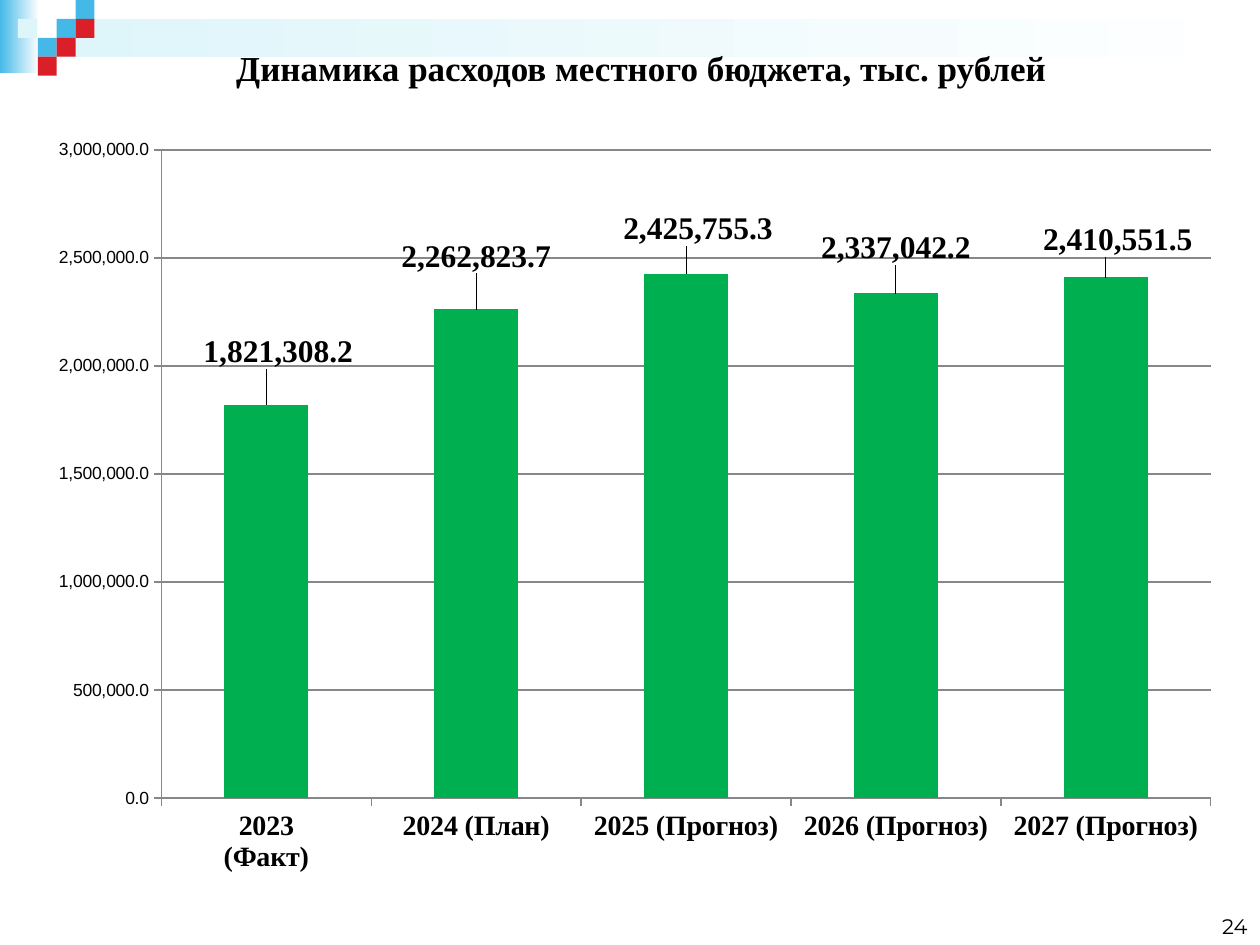
from lxml import etree
from pptx import Presentation
from pptx.chart.data import CategoryChartData
from pptx.dml.color import RGBColor
from pptx.enum.chart import XL_CHART_TYPE, XL_LABEL_POSITION, XL_TICK_MARK
from pptx.enum.shapes import MSO_SHAPE
from pptx.enum.text import MSO_ANCHOR, PP_ALIGN
from pptx.oxml.ns import qn
from pptx.util import Inches, Pt

RECT = MSO_SHAPE.RECTANGLE
COLUMN = XL_CHART_TYPE.COLUMN_CLUSTERED
OUT_END = XL_LABEL_POSITION.OUTSIDE_END
OUTSIDE = XL_TICK_MARK.OUTSIDE
MIDDLE, BOTTOM = MSO_ANCHOR.MIDDLE, MSO_ANCHOR.BOTTOM
CENTER, RIGHT = PP_ALIGN.CENTER, PP_ALIGN.RIGHT

SERIF, SANS, PAGE = "Times New Roman", "Arial", "Montserrat"
BLUE, RED, PALE, WHITE = "44B9E8", "DA1F28", "DEF5FA", "FFFFFF"
BLACK, GREEN, GRAY = "000000", "00B050", "878787"
FORMAT = "#,##0.0"

# Content
TITLE = "Динамика расходов местного бюджета, тыс. рублей"
NUMBER = "24"
# category, value, label shift as a share of the chart (x, y)
BARS = [
    ("2023\n(Факт)", 1821308.2, 0.01, -0.04),
    ("2024 (План)", 2262823.7, 0, -0.04),
    ("2025 (Прогноз)", 2425755.3, 0.01, -0.03),
    ("2026 (Прогноз)", 2337042.2, 0, -0.03),
    ("2027 (Прогноз)", 2410551.5, 0.01, -0.02),
]
BANDS = [((0, 0, 0.31, 0.58), BLUE), ((0.45, 0.15, 9.55, 0.3), PALE)]
# colour, column, row on a grid of small squares
SIDE = 0.15
TILES = [(BLUE, 3, 1), (BLUE, 4, 0), (RED, 4, 1), (BLUE, 2, 2),
         (PALE, 0.95, 1), (RED, 3, 2), (RED, 2, 3)]
PLOT = (0.105, 0.033, 0.874, 0.849)


def color(code):
    return RGBColor.from_string(code)


def style(font, name, size, bold=False):
    font.name, font.size, font.bold = name, Pt(size), bold
    font.color.rgb = color(BLACK)


def block(slide, box):
    shape = slide.shapes.add_shape(RECT, *map(Inches, box))
    shape.shadow.inherit = False
    shape.line.fill.background()
    return shape


def write(shape, text, anchor, align, *look):
    frame = shape.text_frame
    frame.word_wrap = True
    frame.vertical_anchor = anchor
    para = frame.paragraphs[0]
    para.alignment = align
    run = para.add_run()
    run.text = text
    style(run.font, *look)


def layout(**parts):
    node = etree.Element(qn("c:layout"))
    manual = etree.SubElement(node, qn("c:manualLayout"))
    for tag, val in parts.items():
        etree.SubElement(manual, qn("c:" + tag)).set("val", str(val))
    return node


prs = Presentation()
prs.slide_width, prs.slide_height = Inches(10), Inches(7.5)
slide = prs.slides.add_slide(prs.slide_layouts[6])

# Corner ornament
for box, start in BANDS:
    fill = block(slide, box).fill
    fill.gradient()
    fill.gradient_angle = 0
    for stop, code in zip(fill.gradient_stops, (start, WHITE)):
        stop.color.rgb = color(code)
for code, col, row in TILES:
    fill = block(slide, (col * SIDE, row * SIDE, SIDE, SIDE)).fill
    fill.solid()
    fill.fore_color.rgb = color(code)

# Title and slide number
head = slide.shapes.add_textbox(*map(Inches, (0.59, 0.29, 9, 0.49)))
write(head, TITLE, MIDDLE, CENTER, SERIF, 20, True)
foot = slide.shapes.add_textbox(*map(Inches, (7.67, 7, 2.33, 0.5)))
write(foot, NUMBER, BOTTOM, RIGHT, PAGE, 12)

# Chart
data = CategoryChartData(number_format=FORMAT)
data.categories = [bar[0] for bar in BARS]
data.add_series("Series 1", [bar[1] for bar in BARS])
place = map(Inches, (0.28, 0.99, 9.53, 6.06))
chart = slide.shapes.add_chart(COLUMN, *place, data).chart
chart.has_title = chart.has_legend = False
style(chart.font, SANS, 10)

area = chart.plots[0]
area.vary_by_categories = False
area.gap_width = 150
series = area.series[0]
series.format.fill.solid()
series.format.fill.fore_color.rgb = color(GREEN)

# Axes
cat, val = chart.category_axis, chart.value_axis
for axis in (cat, val):
    axis.major_tick_mark = OUTSIDE
    axis.format.line.color.rgb = color(GRAY)
style(cat.tick_labels.font, SERIF, 16, True)
style(val.tick_labels.font, SANS, 10)
val.minimum_scale, val.maximum_scale, val.major_unit = 0, 3000000, 500000
val.tick_labels.number_format = FORMAT
val.tick_labels.number_format_is_linked = False
val.has_major_gridlines = True
val.major_gridlines.format.line.color.rgb = color(GRAY)

# Value labels, each moved off its bar
labels = series.data_labels
labels.show_value = True
labels.position = OUT_END
labels.number_format = FORMAT
labels.number_format_is_linked = False
style(labels.font, SERIF, 18, True)
for i in range(len(BARS)):
    label = series.points[i].data_label
    label.position = OUT_END
    style(label.font, SERIF, 18, True)
root = chart.element
for mark, (_, _, x, y) in zip(root.iter(qn("c:dLbl")), BARS):
    mark.find(qn("c:idx")).addnext(layout(x=x, y=y))

# Plot frame
frame = root.find(".//" + qn("c:plotArea"))
for old in frame.findall(qn("c:layout")):
    frame.remove(old)
x, y, w, h = PLOT
frame.insert(0, layout(layoutTarget="inner", xMode="edge", yMode="edge",
                       x=x, y=y, w=w, h=h))

prs.save("out.pptx")
